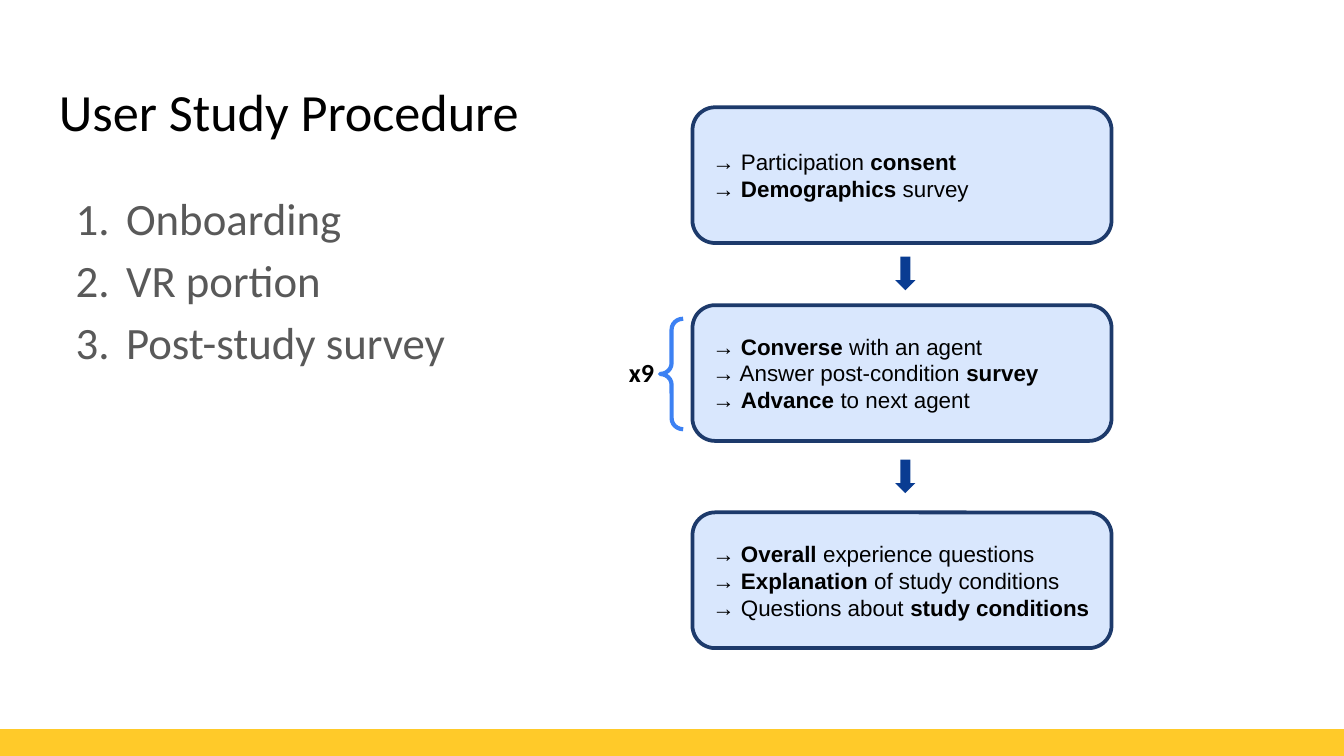
"""Build the user study procedure slide with its three-step flow."""
from dataclasses import dataclass

from lxml import etree
from pptx import Presentation
from pptx import util as u
from pptx.dml.color import RGBColor
from pptx.enum import shapes, text
from pptx.oxml.ns import qn


@dataclass(frozen=True)
class Theme:
    black: str = "000000"
    grey: str = "595959"
    yellow: str = "FFCA29"
    pale: str = "D9E7FD"
    navy: str = "1D3A6B"
    arrow: str = "093C92"
    brace: str = "3C81F3"
    head_font: str = "Calibri"
    box_font: str = "Arial"
    title_size: float = 28
    list_size: float = 24
    label_size: float = 14
    box_size: float = 12


class Deck:
    def __init__(self, s, theme):
        self.s, self.theme = s, theme

    def font(self, f, name, size, color, bold=False):
        f.name, f.size, f.bold = name, u.Pt(size), bold
        f.color.rgb = RGBColor.from_string(color)

    def shape(self, kind, box, fill=None, line=None, width=2):
        sp = self.s.shapes.add_shape(kind, *map(u.Pt, box))
        sp.shadow.inherit = False
        if fill:
            sp.fill.solid()
            sp.fill.fore_color.rgb = RGBColor.from_string(fill)
        else:
            sp.fill.background()
        if line:
            sp.line.color.rgb = RGBColor.from_string(line)
            sp.line.width = u.Pt(width)
        else:
            sp.line.fill.background()
        return sp

    def text(self, box, content, size, color, bold=False, inset=7.2):
        tf = self.s.shapes.add_textbox(*map(u.Pt, box)).text_frame
        tf.word_wrap = True
        tf.margin_top = tf.margin_bottom = u.Pt(inset)
        tf.text = content
        for p in tf.paragraphs:
            for r in p.runs:
                self.font(r.font, self.theme.head_font, size, color, bold)
        return tf

    def numbered(self, box, items):
        t = self.theme
        tf = self.text(box, "\n".join(items), t.list_size, t.grey)
        for p in tf.paragraphs:
            p.line_spacing = 1.15
            pPr = p._p.get_or_add_pPr()
            pPr.set("marL", str(u.Pt(36)))
            pPr.set("indent", str(u.Pt(-27)))
            clr = etree.SubElement(pPr, qn("a:buClr"))
            etree.SubElement(clr, qn("a:srgbClr"), val=t.grey)
            etree.SubElement(pPr, qn("a:buFont"), typeface=t.head_font)
            etree.SubElement(pPr, qn("a:buAutoNum"), type="arabicPeriod")

    def step(self, box, lines):
        t = self.theme
        sp = self.shape(shapes.MSO_SHAPE.ROUNDED_RECTANGLE, box, t.pale, t.navy)
        tf = sp.text_frame
        tf.word_wrap = True
        tf.vertical_anchor = text.MSO_ANCHOR.MIDDLE
        for i, line in enumerate(lines):
            p = tf.add_paragraph() if i else tf.paragraphs[0]
            p.alignment = text.PP_ALIGN.LEFT
            for j, part in enumerate(f"→ {line}".split("*")):
                if part:
                    r = p.add_run()
                    r.text = part
                    self.font(r.font, t.box_font, t.box_size, t.black, j % 2 == 1)

    def arrow(self, box):
        self.shape(shapes.MSO_SHAPE.DOWN_ARROW, box, self.theme.arrow)

    def brace(self, box):
        sp = self.shape(shapes.MSO_SHAPE.LEFT_BRACE, box, line=self.theme.brace, width=2.25)
        sp.adjustments[0] = 0.47


STEPS = [
    (57.5, ["Participation *consent*", "*Demographics* survey"]),
    (163.5, ["*Converse* with an agent", "Answer post-condition *survey*",
             "*Advance* to next agent"]),
    (274.5, ["*Overall* experience questions", "*Explanation* of study conditions",
             "Questions about *study conditions*"]),
]


def main():
    prs = Presentation()
    prs.slide_width, prs.slide_height = u.Pt(720), u.Pt(405)
    t = Theme()
    d = Deck(prs.slides.add_slide(prs.slide_layouts[6]), t)
    d.text((24.5, 35.5, 671, 45), "User Study Procedure", t.title_size, t.black)
    d.numbered((24.5, 90.75, 379.5, 269), ["Onboarding", "VR portion", "Post-study survey"])
    d.shape(shapes.MSO_SHAPE.RECTANGLE, (0, 390.6, 720, 14.4), t.yellow)
    for top, lines in STEPS:
        d.step((371, top, 224.5, 72.7), lines)
    for top in (137.5, 246.2):
        d.arrow((479.6, top, 10.8, 18))
    d.text((329.8, 187.2, 33.8, 24.5), "x9", t.label_size, t.black, True, 3.6)
    d.brace((353.6, 170.8, 12.4, 59.2))
    prs.save("out.pptx")


if __name__ == "__main__":
    main()
